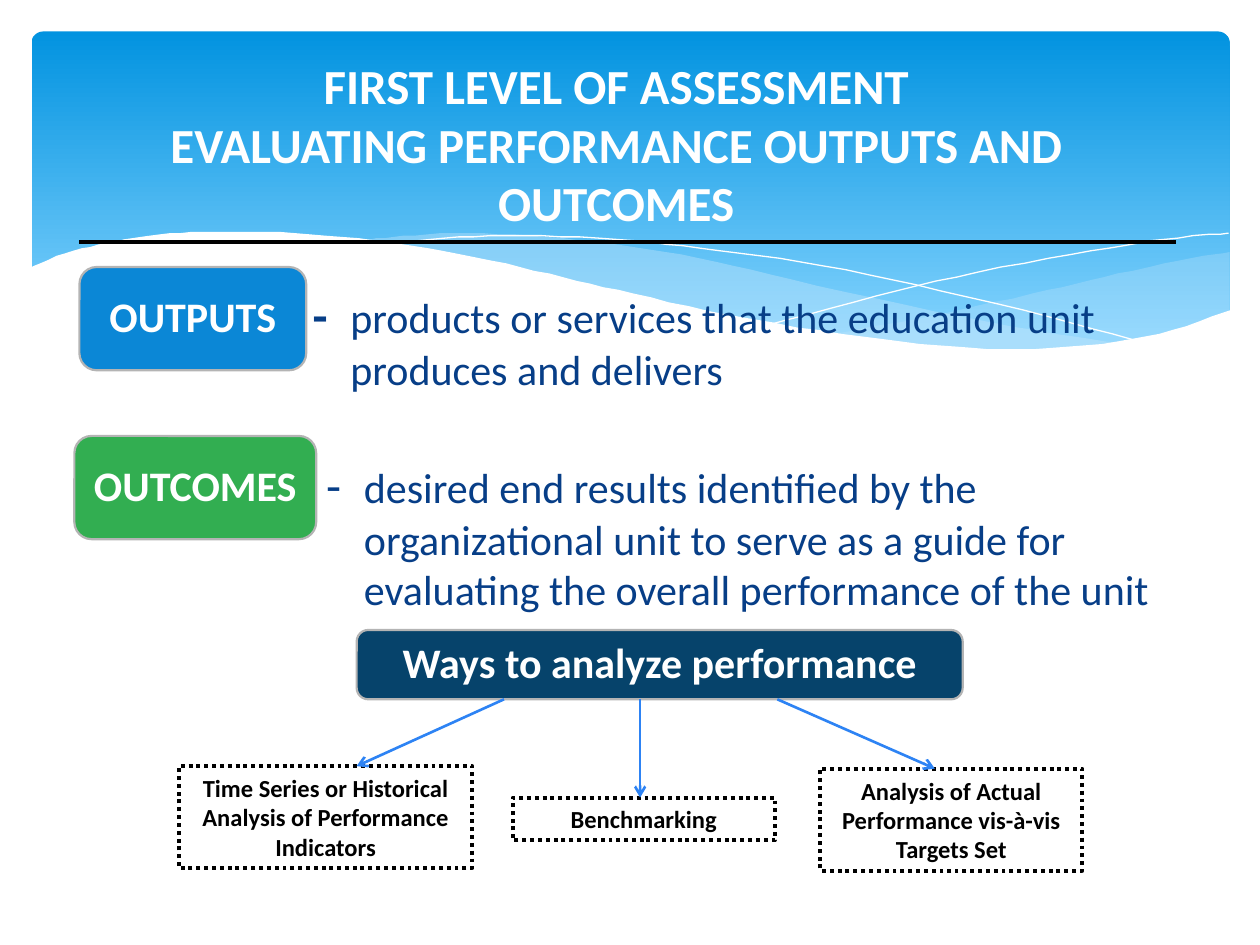
from typing import NamedTuple

from lxml import etree
from pptx import Presentation
from pptx import util as u
from pptx.dml.color import RGBColor
from pptx.enum import dml, shapes, text
from pptx.oxml.ns import qn

Pt = u.Pt
FONT = "Calibri"
WHITE = RGBColor(0xFF, 0xFF, 0xFF)
BLACK = RGBColor(0, 0, 0)
SKY_TOP = RGBColor(0x02, 0x93, 0xE0)
SKY_BOTTOM = RGBColor(0x83, 0xD3, 0xFE)
WAVE_TINT = RGBColor(0xC6, 0xE7, 0xFC)
TEXT_BLUE = RGBColor(0x07, 0x3E, 0x87)
OUTPUT_BLUE = RGBColor(0x0B, 0x87, 0xD6)
OUTCOME_GREEN = RGBColor(0x32, 0xAE, 0x51)
NAVY = RGBColor(0x06, 0x43, 0x6B)
BORDER_GRAY = RGBColor(0xB4, 0xB4, 0xB4)
ARROW_BLUE = RGBColor(0x2D, 0x83, 0xF4)


class Box(NamedTuple):
    left: float
    top: float
    width: float
    height: float

    def lengths(self) -> list:
        return [Pt(value) for value in self]


class Label(NamedTuple):
    caption: str
    box: Box
    fill: RGBColor


class Method(NamedTuple):
    caption: str
    box: Box
    arrow_start: float
    arrow_end: float


class Wave(NamedTuple):
    edges: list  # smooth edges, joined by straight lines; hundredths of an inch
    fill: RGBColor | None
    opacity: int


WAVES = [
    Wave([[(976, 200), (935, 207), (876, 220), (832, 230), (753, 248), (661, 265)],
          [(661, 265), (705, 271), (757, 276), (803, 278), (844, 277), (889, 272),
           (928, 263), (963, 252), (976, 247)]], WAVE_TINT, 29),
    Wave([[(893, 273), (837, 265), (741, 247), (629, 222), (555, 205), (489, 194),
           (420, 187), (361, 185), (313, 188), (286, 191)],
          [(286, 191), (342, 199), (404, 211), (491, 232), (566, 248), (650, 264),
           (722, 274), (785, 278), (838, 278), (893, 273)]], WAVE_TINT, 40),
    Wave([[(309, 195), (353, 189), (416, 187), (489, 190), (556, 197), (636, 208),
           (727, 226), (831, 251), (907, 272)]], None, 100),
    Wave([[(613, 257), (695, 235), (776, 216), (866, 199), (924, 190), (975, 185)]],
         None, 100),
    Wave([[(977, 246), (930, 262), (875, 273), (809, 277), (744, 274), (668, 265),
           (579, 250), (503, 233), (447, 220), (391, 207), (340, 197), (271, 188),
           (211, 184), (161, 184), (119, 187), (85, 193), (52, 201), (23, 213)],
          [(23, 329), (977, 329)]], WHITE, 100),
]

LABELS = [
    Label("OUTPUTS", Box(45.4, 152.6, 129.6, 59), OUTPUT_BLUE),
    Label("OUTCOMES", Box(42.5, 249.1, 138.2, 59), OUTCOME_GREEN),
    Label("Ways to analyze performance", Box(203.8, 360, 346.3, 39.6), NAVY),
]

METHODS = [
    Method("Time Series or Historical Analysis of Performance Indicators",
           Box(102.2, 437.8, 167.8, 58.3), 288, 203.8),
    Method("Benchmarking", Box(293, 455.8, 149.8, 24.5), 365.8, 365.8),
    Method("Analysis of Actual Performance vis-à-vis Targets Set",
           Box(468.7, 439.2, 149.8, 58.3), 444.2, 534.2),
]


def smooth(points: list, steps: int = 5) -> list:
    """Catmull-Rom curve through the given points."""
    padded = [points[0], *points, points[-1]]
    curve = [points[0]]
    for a, b, c, d in zip(padded, padded[1:], padded[2:], padded[3:]):
        for step in range(1, steps + 1):
            t = step / steps
            curve.append(tuple(
                (2 * q + (r - p) * t + (2 * p - 5 * q + 4 * r - s) * t ** 2
                 + (3 * q - p - 3 * r + s) * t ** 3) / 2
                for p, q, r, s in zip(a, b, c, d)))
    return curve


def draw_wave(slide, wave: Wave) -> None:
    points = [point for edge in wave.edges
              for point in (smooth(edge) if len(edge) > 2 else edge)]
    builder = slide.shapes.build_freeform(*points[0], scale=Pt(0.72))
    builder.add_line_segments(points[1:], close=wave.fill is not None)
    shape = builder.convert_to_shape()
    shape.shadow.inherit = False
    if wave.fill is None:
        shape.fill.background()
        shape.line.color.rgb = WHITE
        shape.line.width = Pt(0)
        return
    shape.fill.solid()
    shape.fill.fore_color.rgb = wave.fill
    shape.line.fill.background()
    if wave.opacity < 100:
        color = shape.element.spPr.find(f"{qn('a:solidFill')}/{qn('a:srgbClr')}")
        etree.SubElement(color, qn("a:alpha"), val=str(wave.opacity * 1000))


def style(target, size: float, color: RGBColor, bold: bool) -> None:
    font = target.font
    font.name, font.size, font.bold = FONT, Pt(size), bold
    font.color.rgb = color


def draw_box(slide, kind, box: Box, caption: str, size: float, color: RGBColor):
    shape = slide.shapes.add_shape(kind, *box.lengths())
    shape.shadow.inherit = False
    frame = shape.text_frame
    frame.word_wrap = True
    frame.vertical_anchor = text.MSO_ANCHOR.MIDDLE
    paragraph = frame.paragraphs[0]
    paragraph.text = caption
    paragraph.alignment = text.PP_ALIGN.CENTER
    style(paragraph, size, color, True)
    return shape


def draw_label(slide, label: Label) -> None:
    shape = draw_box(slide, shapes.MSO_SHAPE.ROUNDED_RECTANGLE, label.box,
                     label.caption, 24, WHITE)
    shape.fill.solid()
    shape.fill.fore_color.rgb = label.fill
    shape.line.color.rgb = BORDER_GRAY
    shape.line.width = Pt(1.25)
    frame = shape.text_frame
    frame.margin_left = frame.margin_right = Pt(4.5)
    frame.paragraphs[0].line_spacing = 0.9


def draw_line(slide, start: tuple, end: tuple, color: RGBColor, width: float,
              arrow: bool = False) -> None:
    line = slide.shapes.add_connector(shapes.MSO_CONNECTOR.STRAIGHT,
                                      *map(Pt, (*start, *end)))
    line.line.color.rgb = color
    line.line.width = Pt(width)
    if arrow:
        etree.SubElement(line.line._get_or_add_ln(), qn("a:tailEnd"), type="arrow")
    etree.SubElement(line.element.spPr, qn("a:effectLst"))


def draw_method(slide, method: Method) -> None:
    shape = draw_box(slide, shapes.MSO_SHAPE.RECTANGLE, method.box,
                     method.caption, 14, BLACK)
    shape.fill.background()
    shape.line.color.rgb = BLACK
    shape.line.width = Pt(2.25)
    shape.line.dash_style = dml.MSO_LINE.ROUND_DOT
    shape.text_frame.auto_size = text.MSO_AUTO_SIZE.SHAPE_TO_FIT_TEXT
    draw_line(slide, (method.arrow_start, 399.6), (method.arrow_end, method.box.top),
              ARROW_BLUE, 1.5, arrow=True)


def place(shape, box: Box) -> None:
    shape.left, shape.top, shape.width, shape.height = box.lengths()
    shape.text_frame.word_wrap = True
    shape.text_frame.auto_size = text.MSO_AUTO_SIZE.NONE


def write_definition(shape, box: Box, definition: str, bold_dash: bool) -> None:
    place(shape, box)
    paragraph = shape.text_frame.paragraphs[0]
    paragraph.space_before = Pt(5.6)
    properties = paragraph._p.get_or_add_pPr()
    properties.set("marL", str(Pt(21.6)))
    properties.set("indent", str(-Pt(21.6)))
    etree.SubElement(properties, qn("a:buNone"))
    for words, size, bold in (("-\t", 28, bold_dash), (definition, 24, False)):
        run = paragraph.add_run()
        run.text = words
        style(run, size, TEXT_BLUE, bold)


def main() -> None:
    presentation = Presentation()
    presentation.slide_width, presentation.slide_height = Pt(720), Pt(540)
    slide = presentation.slides.add_slide(presentation.slide_layouts[1])
    title, body = slide.placeholders

    # Blue banner with waves
    banner = slide.shapes.add_shape(shapes.MSO_SHAPE.ROUNDED_RECTANGLE,
                                    *Box(18, 18, 684.7, 194.4).lengths())
    banner.adjustments[0] = 0.034
    banner.shadow.inherit = False
    banner.line.fill.background()
    banner.fill.gradient()
    banner.fill.gradient_angle = 270
    for stop, color, position in zip(banner.fill.gradient_stops,
                                     (SKY_TOP, SKY_BOTTOM), (0, 0.9)):
        stop.color.rgb, stop.position = color, position
    for wave in WAVES:
        draw_wave(slide, wave)

    # Title and definitions, brought in front of the banner
    for placeholder in (title, body):
        placeholder.element.getparent().append(placeholder.element)
    place(title, Box(45.4, 30.2, 613.4, 103.7))
    title.text_frame.vertical_anchor = text.MSO_ANCHOR.MIDDLE
    heading = title.text_frame.paragraphs[0]
    heading.text = ("FIRST LEVEL OF ASSESSMENT\v"
                    "EVALUATING PERFORMANCE OUTPUTS AND OUTCOMES")
    heading.alignment = text.PP_ALIGN.CENTER
    style(heading, 28, WHITE, True)
    write_definition(body, Box(171.4, 159.1, 527.8, 53.3),
                     "products or services that the education unit produces and delivers",
                     True)
    draw_line(slide, (45.4, 138.2), (671.8, 138.2), BLACK, 2.25)
    outcomes_box = Box(179.3, 256.3, 514.1, 53.3)
    write_definition(slide.shapes.add_textbox(*outcomes_box.lengths()), outcomes_box,
                     "desired end results identified by the organizational unit to serve "
                     "as a guide for evaluating the overall performance of the unit", False)

    # Labels and the three methods
    for label in LABELS:
        draw_label(slide, label)
    for method in METHODS:
        draw_method(slide, method)

    presentation.save("out.pptx")


if __name__ == "__main__":
    main()
